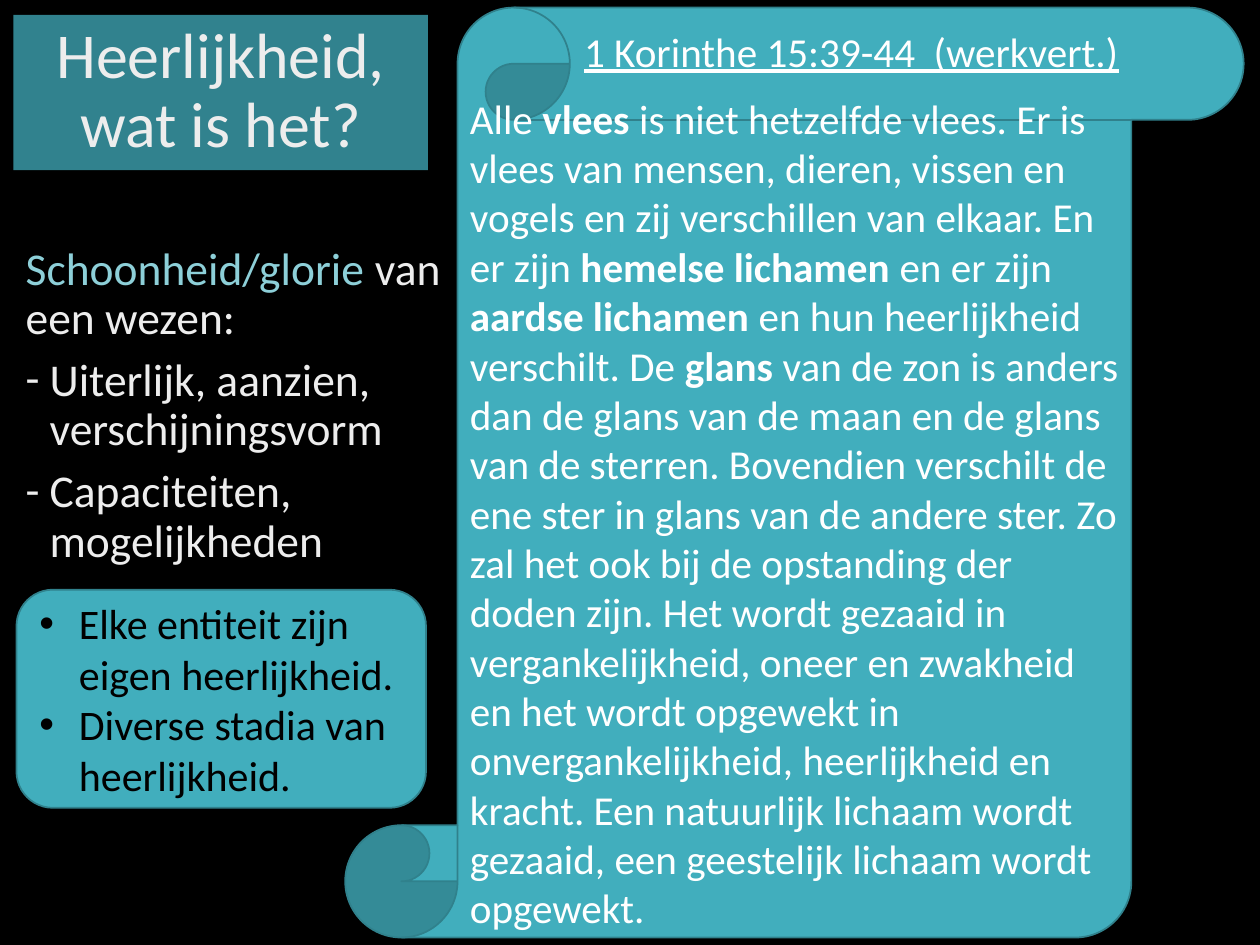
from pptx import Presentation
from pptx.dml.color import RGBColor
from pptx.enum.shapes import MSO_SHAPE
from pptx.enum.text import MSO_ANCHOR, PP_ALIGN
from pptx.oxml.ns import qn
from pptx.util import Pt
from lxml import etree

RECT, ROUND, SCROLL = MSO_SHAPE.RECTANGLE, MSO_SHAPE.ROUNDED_RECTANGLE, MSO_SHAPE.VERTICAL_SCROLL
TOP, MIDDLE = MSO_ANCHOR.TOP, MSO_ANCHOR.MIDDLE
LEFT, CENTER, RIGHT = PP_ALIGN.LEFT, PP_ALIGN.CENTER, PP_ALIGN.RIGHT
FONT = "Calibri"
COLORS = {"back": "000000", "title": "31828E", "panel": "41AEBD", "edge": "30818C",
          "accent": "8DCFD8", "pale": "EDEDED", "white": "FFFFFF", "black": "000000"}

TITLE = [("Heerlijkheid, wat is het?", {})]
MEANING = [("Schoonheid/glorie", {"color": "accent"}), (" van een wezen:", {})]
ASPECTS = ["Uiterlijk, aanzien, verschijningsvorm", "Capaciteiten, mogelijkheden"]
REFERENCE = [("1 Korinthe 15:39-44  (werkvert.)", {"underline": True})]
BOLD = {"bold": True}
VERSE = [
    ("Alle ", {}), ("vlees", BOLD),
    (" is niet hetzelfde vlees. Er is vlees van mensen, dieren, vissen en vogels "
     "en zij verschillen van elkaar. En er zijn ", {}),
    ("hemelse lichamen ", BOLD), ("en er zijn ", {}), ("aardse lichamen ", BOLD),
    ("en hun heerlijkheid verschilt. De ", {}), ("glans", BOLD),
    (" van de zon is anders dan de glans van de maan en de glans van de sterren. "
     "Bovendien verschilt de ene ster in glans van de andere ster. Zo zal het ook bij de "
     "opstanding der doden zijn. Het wordt gezaaid in vergankelijkheid, oneer en zwakheid "
     "en het wordt opgewekt in onvergankelijkheid, heerlijkheid en kracht. Een natuurlijk "
     "lichaam wordt gezaaid, een geestelijk lichaam wordt opgewekt.", {}),
]
SUMMARY = ["Elke entiteit zijn eigen heerlijkheid.", "Diverse stadia van heerlijkheid."]


def rgb(name):
    return RGBColor.from_string(COLORS[name])


def add_panel(s, kind, box, fill, edge=None):
    sp = s.shapes.add_shape(kind, *map(Pt, box))
    sp.shadow.inherit = False
    sp.fill.solid()
    sp.fill.fore_color.rgb = rgb(fill)
    if edge:
        sp.line.color.rgb = rgb(edge)
        sp.line.width = Pt(1)
    else:
        sp.line.fill.background()
    return sp


def set_bullet(p, char, indent):
    pPr = p._p.get_or_add_pPr()
    pPr.set("marL", str(Pt(indent)))
    pPr.set("indent", str(-Pt(indent)))
    etree.SubElement(pPr, qn("a:buFont")).set("typeface", "Arial" if char == "•" else FONT)
    etree.SubElement(pPr, qn("a:buChar")).set("char", char)


def write(sp, paragraphs, size, color, anchor=MIDDLE, align=LEFT, spacing=1.0, gap=0):
    tf = sp.text_frame
    tf.word_wrap = True
    tf.vertical_anchor = anchor
    for i, (runs, bullet) in enumerate(paragraphs):
        p = tf.add_paragraph() if i else tf.paragraphs[0]
        p.alignment = align
        p.line_spacing = spacing
        p.space_before = Pt(gap if i else 0)
        if bullet:
            set_bullet(p, *bullet)
        for text, style in runs:
            r = p.add_run()
            r.text = text
            r.font.name = FONT
            r.font.size = Pt(size)
            r.font.bold = style.get("bold", False)
            r.font.underline = style.get("underline", False)
            r.font.color.rgb = rgb(style.get("color", color))
    return tf


def bulleted(texts, char, indent):
    return [([(text, {})], (char, indent)) for text in texts]


prs = Presentation()
prs.slide_width, prs.slide_height = Pt(720), Pt(540)
s = prs.slides.add_slide(prs.slide_layouts[6])
s.background.fill.solid()
s.background.fill.fore_color.rgb = rgb("back")

title = add_panel(s, RECT, (7.6, 8.6, 236.9, 88.6), "title")
write(title, [(TITLE, None)], 36.5, "pale", align=CENTER, spacing=0.9)

body = s.shapes.add_textbox(Pt(7.6), Pt(137), Pt(287.3), Pt(202.3))
write(body, [(MEANING, None)] + bulleted(ASPECTS, "-", 13.7), 26, "pale",
      anchor=TOP, spacing=0.9, gap=7.5)

scroll = add_panel(s, SCROLL, (197.3, 4.3, 513.4, 531.4), "panel", "edge")
tf = write(scroll, [(REFERENCE, None), (VERSE, None)], 23.5, "white", gap=10)
tf.paragraphs[0].alignment = RIGHT
tf.margin_bottom = Pt(28)

summary = add_panel(s, ROUND, (9.4, 337, 234, 124.6), "panel", "edge")
write(summary, bulleted(SUMMARY, "•", 22.5), 24, "black")

prs.save("out.pptx")
